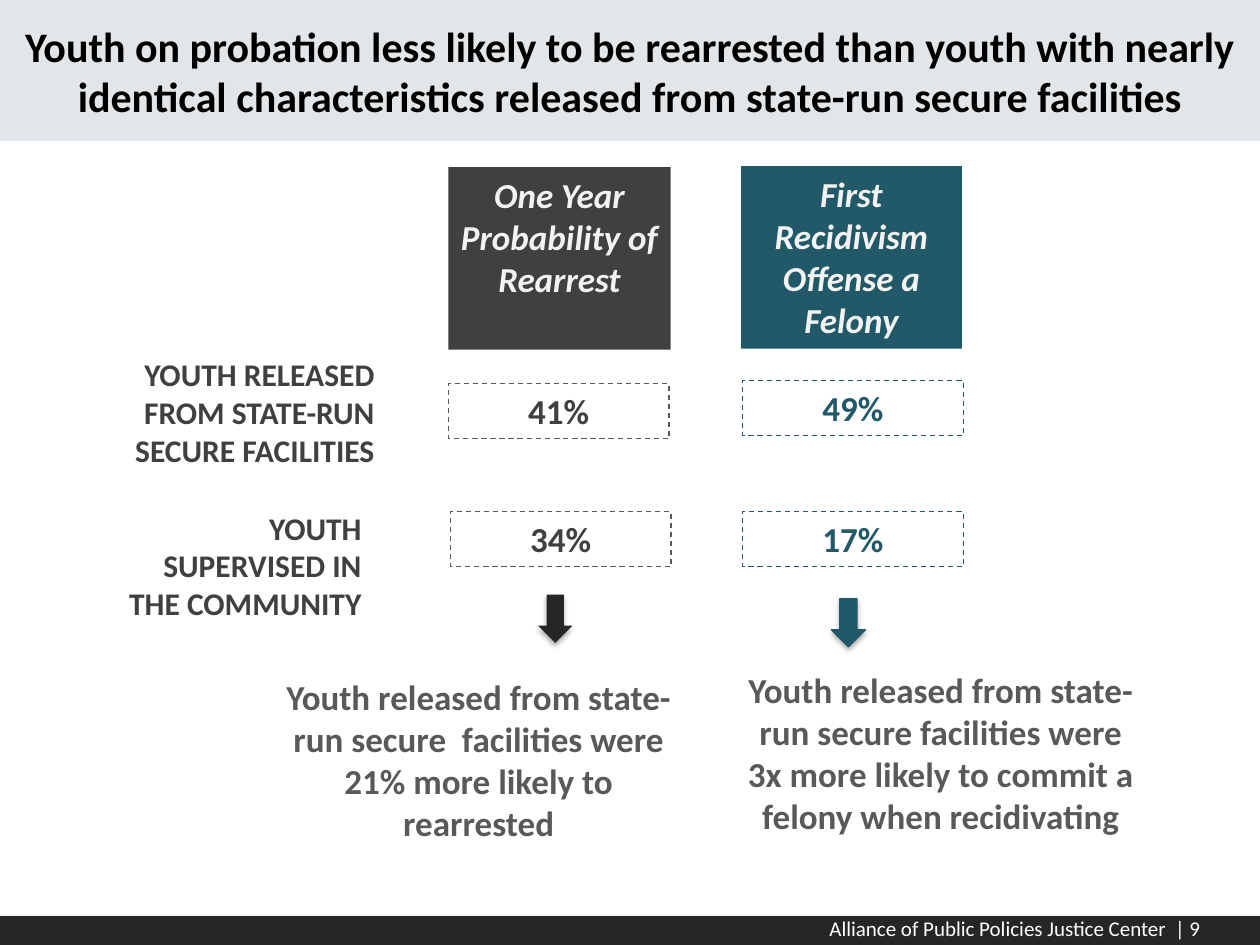
from dataclasses import dataclass
from typing import Optional

from lxml.etree import SubElement
from pptx import Presentation
from pptx.dml.color import RGBColor
from pptx.enum.dml import MSO_LINE
from pptx.enum.shapes import MSO_SHAPE
from pptx.enum.text import MSO_ANCHOR, PP_ALIGN
from pptx.oxml.ns import qn
from pptx.shapes.autoshape import Shape
from pptx.slide import Slide
from pptx.util import Cm, Pt


@dataclass(frozen=True)
class Theme:
    font: str = "Calibri"
    title_size: int = 24
    body_size: int = 20
    label_size: int = 18
    footer_size: int = 12
    black: str = "000000"
    white: str = "FFFFFF"
    ink: str = "262626"
    charcoal: str = "404040"
    gray: str = "595959"
    teal: str = "215968"
    pale: str = "F2F2F2"
    band: str = "E2E6E9"


@dataclass(frozen=True)
class Box:
    """Position and size in centimetres."""
    left: float
    top: float
    width: float
    height: float


@dataclass(frozen=True)
class TextStyle:
    size: int
    color: str
    align: PP_ALIGN = PP_ALIGN.CENTER
    anchor: MSO_ANCHOR = MSO_ANCHOR.TOP
    bold: bool = True
    italic: bool = False


@dataclass(frozen=True)
class Rate:
    value: str
    left: float
    top: float


@dataclass(frozen=True)
class Measure:
    """One column: heading, two rates, an arrow and the finding."""
    heading: str
    heading_box: Box
    color: str
    rates: tuple[Rate, ...]
    rate_line: str
    arrow_box: Box
    arrow_color: str
    arrow_line: Optional[str]
    finding: str
    finding_box: Box


THEME = Theme()
SLIDE_WIDTH, SLIDE_HEIGHT = 25.4, 19.05
RATE_WIDTH, RATE_HEIGHT = 4.45, 1.11
ARROW_WIDTH, ARROW_HEIGHT = 0.69, 0.97

TITLE = ("Youth on probation less likely to be rearrested than youth with nearly "
         "identical characteristics released from state-run secure facilities")
FOOTER = "Alliance of Public Policies Justice Center  | 9"

GROUP_LABELS = (
    ("YOUTH RELEASED FROM STATE-RUN SECURE FACILITIES", Box(1.32, 7.04, 6.48, 2.57)),
    ("YOUTH SUPERVISED IN THE COMMUNITY", Box(2.31, 10.13, 5.23, 2.57)),
)

MEASURES = (
    Measure(
        "One Year Probability of Rearrest", Box(9.04, 3.37, 4.48, 3.68), THEME.charcoal,
        (Rate("41%", 9.04, 7.73), Rate("34%", 9.08, 10.31)), THEME.gray,
        Box(10.85, 11.99, ARROW_WIDTH, ARROW_HEIGHT), THEME.ink, None,
        "Youth released from state-run secure  facilities were 21% more likely to rearrested",
        Box(5.46, 13.49, 8.38, 3.68)),
    Measure(
        "First Recidivism Offense a Felony", Box(14.94, 3.35, 4.45, 3.68), THEME.teal,
        (Rate("49%", 14.97, 7.67), Rate("17%", 14.97, 10.31)), THEME.teal,
        Box(16.76, 12.07, ARROW_WIDTH, ARROW_HEIGHT), THEME.teal, THEME.teal,
        "Youth released from state-run secure facilities were 3x more likely "
        "to commit a felony when recidivating",
        Box(14.71, 13.36, 8.51, 3.68)),
)


def rgb(color: str) -> RGBColor:
    return RGBColor.from_string(color)


def write(shape: Shape, text: str, style: TextStyle) -> None:
    frame = shape.text_frame
    frame.word_wrap = True
    frame.vertical_anchor = style.anchor
    paragraph = frame.paragraphs[0]
    paragraph.alignment = style.align
    run = paragraph.add_run()
    run.text = text
    font = run.font
    font.name = THEME.font
    font.size = Pt(style.size)
    font.bold = style.bold
    font.italic = style.italic
    font.color.rgb = rgb(style.color)


def add_text(slide: Slide, box: Box, text: str, style: TextStyle) -> None:
    label = slide.shapes.add_textbox(
        Cm(box.left), Cm(box.top), Cm(box.width), Cm(box.height))
    write(label, text, style)


def add_block(slide: Slide, box: Box, fill: Optional[str] = None,
              line: Optional[str] = None, line_width: float = 0.75,
              kind: MSO_SHAPE = MSO_SHAPE.RECTANGLE) -> Shape:
    block = slide.shapes.add_shape(
        kind, Cm(box.left), Cm(box.top), Cm(box.width), Cm(box.height))
    block.shadow.inherit = False
    if fill:
        block.fill.solid()
        block.fill.fore_color.rgb = rgb(fill)
    else:
        block.fill.background()
    if line:
        block.line.color.rgb = rgb(line)
        block.line.width = Pt(line_width)
    else:
        block.line.fill.background()
    return block


def add_soft_shadow(shape: Shape) -> None:
    """Cast a blurred shadow straight down."""
    effects = shape.element.spPr.find(qn("a:effectLst"))
    shadow = SubElement(effects, qn("a:outerShdw"), blurRad=str(Pt(3.1)),
                        dist=str(Pt(1.8)), dir="5400000", rotWithShape="0")
    color = SubElement(shadow, qn("a:srgbClr"), val=THEME.black)
    SubElement(color, qn("a:alpha"), val="35000")


def add_frame(slide: Slide) -> None:
    """Draw the title band and the footer strip."""
    footer = add_block(slide, Box(0, 18.47, SLIDE_WIDTH, 0.58), THEME.ink)
    add_soft_shadow(footer)
    add_text(slide, Box(13.46, 18.39, 11, 0.66), FOOTER,
             TextStyle(THEME.footer_size, THEME.white, PP_ALIGN.RIGHT,
                       MSO_ANCHOR.MIDDLE, bold=False))
    title_band = add_block(slide, Box(0, 0, SLIDE_WIDTH, 2.84), THEME.band)
    write(title_band, TITLE,
          TextStyle(THEME.title_size, THEME.black, anchor=MSO_ANCHOR.MIDDLE))


def add_measure(slide: Slide, measure: Measure) -> None:
    heading = add_block(slide, measure.heading_box, measure.color)
    write(heading, measure.heading,
          TextStyle(THEME.body_size, THEME.pale, italic=True))
    for rate in measure.rates:
        rate_box = add_block(slide, Box(rate.left, rate.top, RATE_WIDTH, RATE_HEIGHT),
                             line=measure.rate_line)
        rate_box.line.dash_style = MSO_LINE.DASH
        write(rate_box, rate.value, TextStyle(THEME.body_size, measure.color))
    finding = add_block(slide, measure.finding_box, line=THEME.white, line_width=2.25)
    write(finding, measure.finding, TextStyle(THEME.body_size, THEME.gray))
    arrow = add_block(slide, measure.arrow_box, measure.arrow_color,
                      measure.arrow_line, kind=MSO_SHAPE.DOWN_ARROW)
    add_soft_shadow(arrow)


def main() -> None:
    deck = Presentation()
    deck.slide_width, deck.slide_height = Cm(SLIDE_WIDTH), Cm(SLIDE_HEIGHT)
    slide = deck.slides.add_slide(deck.slide_layouts[6])
    add_frame(slide)
    for label, box in GROUP_LABELS:
        add_text(slide, box, label,
                 TextStyle(THEME.label_size, THEME.charcoal, PP_ALIGN.RIGHT))
    for measure in MEASURES:
        add_measure(slide, measure)
    deck.save("out.pptx")


if __name__ == "__main__":
    main()
